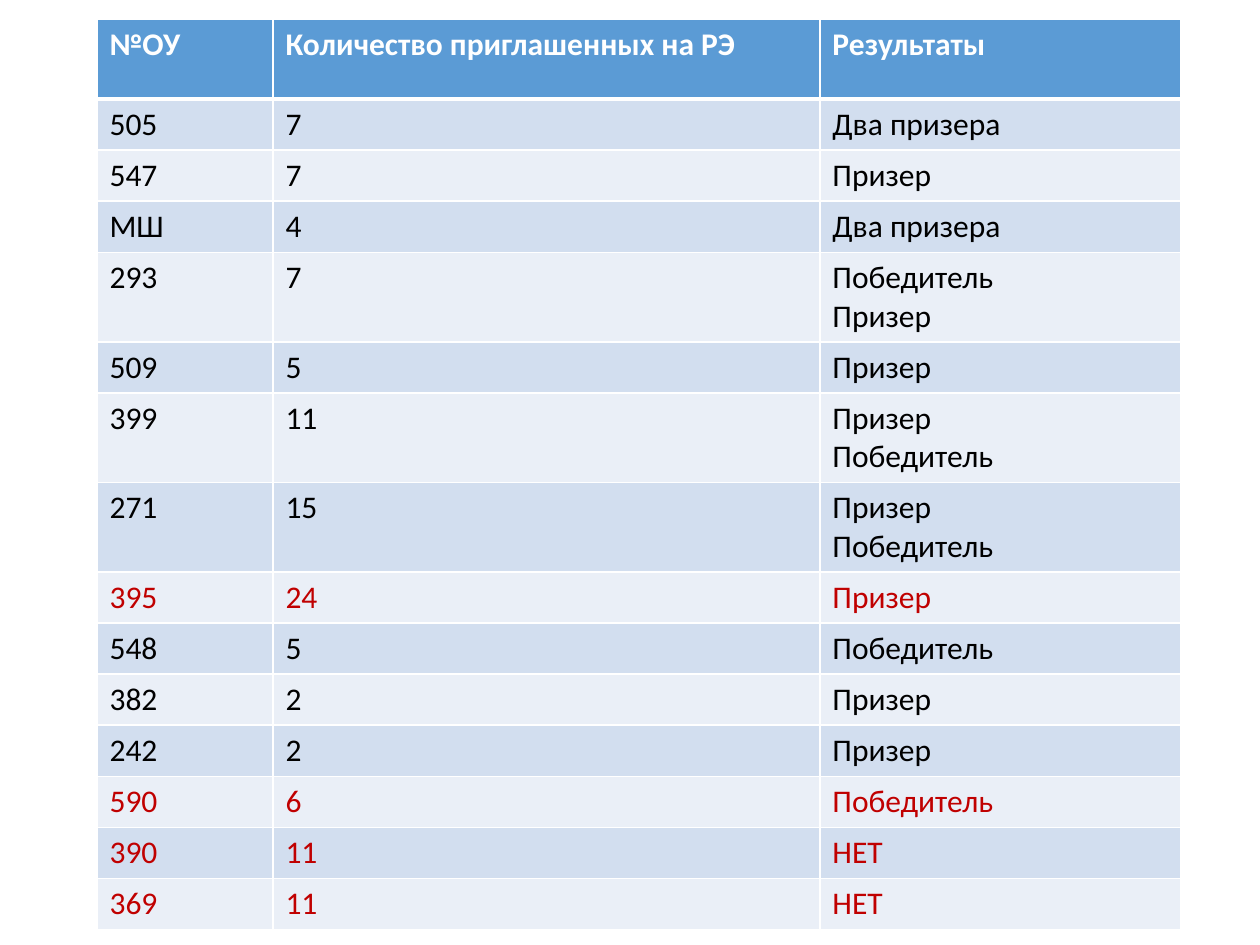
from lxml import etree
from pptx import Presentation
from pptx.dml.color import RGBColor
from pptx.oxml.ns import qn
from pptx.util import Emu, Pt

# Content: school, number invited, results
HEADERS = ("№ОУ", "Количество приглашенных на РЭ", "Результаты")
SCHOOLS = [
    ("505", "7", "Два призера"),
    ("547", "7", "Призер"),
    ("МШ", "4", "Два призера"),
    ("293", "7", "Победитель\nПризер"),
    ("509", "5", "Призер"),
    ("399", "11", "Призер\nПобедитель"),
    ("271", "15", "Призер\nПобедитель"),
    ("395", "24", "Призер"),
    ("548", "5", "Победитель"),
    ("382", "2", "Призер"),
    ("242", "2", "Призер"),
    ("590", "6", "Победитель"),
    ("390", "11", "НЕТ"),
    ("369", "11", "НЕТ"),
]
HIGHLIGHTED = {"395", "590", "390", "369"}

# Lengths in px, 126 to the inch
SCALE = 914400 / 126
SLIDE_WIDTH, SLIDE_HEIGHT = 1260, 945
TABLE_LEFT, TABLE_TOP = 97, 19
COLUMN_WIDTHS = (176, 547, 361)
HEADER_HEIGHT = 80
ROW_HEIGHTS = {1: 51, 2: 89}  # by number of text lines

FONT = "Calibri"
WHITE = RGBColor(0xFF, 0xFF, 0xFF)
BLACK = RGBColor(0x00, 0x00, 0x00)
RED = RGBColor(0xC0, 0x00, 0x00)
HEADER_FILL = RGBColor(0x5B, 0x9B, 0xD5)
BAND_FILLS = (RGBColor(0xD2, 0xDE, 0xEF), RGBColor(0xEA, 0xEF, 0xF7))


def px(length):
    return Emu(round(length * SCALE))


def set_borders(cell, top, bottom):
    """White borders, 1 pt at the sides; top and bottom in points."""
    properties = cell._tc.get_or_add_tcPr()
    widths = (("a:lnL", 1), ("a:lnR", 1), ("a:lnT", top), ("a:lnB", bottom))
    for position, (tag, width) in enumerate(widths):
        line = etree.Element(qn(tag), w=str(Pt(width)))
        fill = etree.SubElement(line, qn("a:solidFill"))
        etree.SubElement(fill, qn("a:srgbClr"), val=str(WHITE))
        properties.insert(position, line)


def fill_cell(cell, text, fill, color, bold):
    cell.fill.solid()
    cell.fill.fore_color.rgb = fill
    cell.text_frame.text = text
    for paragraph in cell.text_frame.paragraphs:
        for run in paragraph.runs:
            run.font.name = FONT
            run.font.size = Pt(18)
            run.font.bold = bold
            run.font.color.rgb = color


presentation = Presentation()
presentation.slide_width = px(SLIDE_WIDTH)
presentation.slide_height = px(SLIDE_HEIGHT)
slide = presentation.slides.add_slide(presentation.slide_layouts[6])

# Table grid
row_heights = [HEADER_HEIGHT] + [
    ROW_HEIGHTS[result.count("\n") + 1] for _, _, result in SCHOOLS
]
table = slide.shapes.add_table(
    len(row_heights), len(COLUMN_WIDTHS), px(TABLE_LEFT), px(TABLE_TOP),
    px(sum(COLUMN_WIDTHS)), px(sum(row_heights)),
).table
for column, width in zip(table.columns, COLUMN_WIDTHS):
    column.width = px(width)
for row, height in zip(table.rows, row_heights):
    row.height = px(height)

# Header and school rows
for row_index, texts in enumerate([HEADERS] + SCHOOLS):
    is_header = row_index == 0
    if is_header:
        fill, color = HEADER_FILL, WHITE
    else:
        fill = BAND_FILLS[(row_index - 1) % 2]
        color = RED if texts[0] in HIGHLIGHTED else BLACK
    for column_index, text in enumerate(texts):
        cell = table.cell(row_index, column_index)
        fill_cell(cell, text, fill, color, is_header)
        set_borders(cell, top=3 if row_index == 1 else 1, bottom=3 if is_header else 1)

presentation.save("out.pptx")
